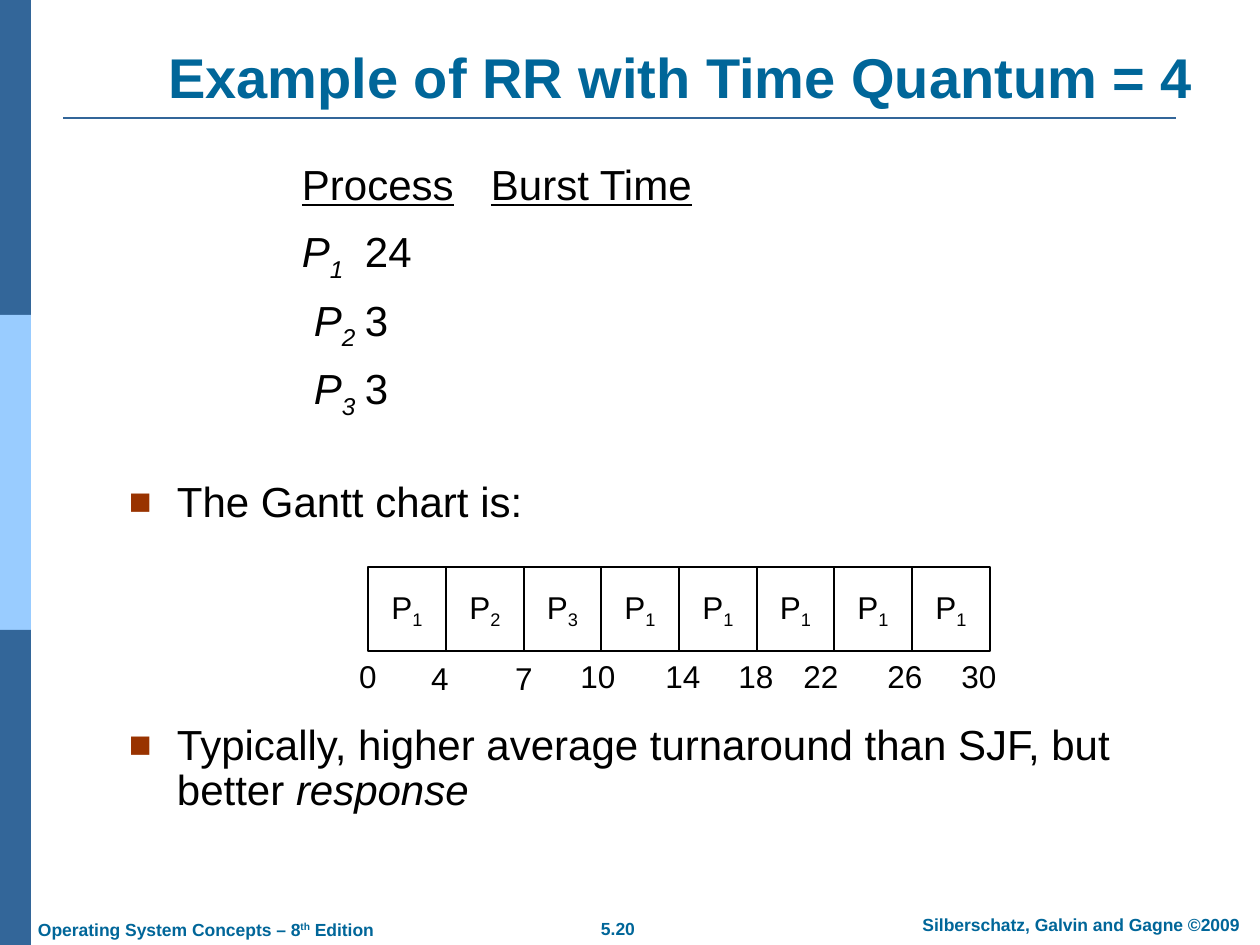
"""Build a slide showing round-robin scheduling with its Gantt chart."""
from dataclasses import dataclass

from lxml import etree
from pptx import Presentation
from pptx.dml.color import RGBColor
from pptx.enum.shapes import MSO_CONNECTOR, MSO_SHAPE
from pptx.enum.text import MSO_ANCHOR, PP_ALIGN
from pptx.oxml.ns import qn
from pptx.util import Pt

RECT = MSO_SHAPE.RECTANGLE
STRAIGHT = MSO_CONNECTOR.STRAIGHT
LEFT, CENTER = PP_ALIGN.LEFT, PP_ALIGN.CENTER
TOP, MIDDLE, BOTTOM = MSO_ANCHOR.TOP, MSO_ANCHOR.MIDDLE, MSO_ANCHOR.BOTTOM
FONT = "Arial"
COLORS = {"bar": "336699", "light": "99CCFF", "title": "006699",
          "bullet": "993300", "text": "000000", "white": "FFFFFF"}


@dataclass(frozen=True)
class Box:
    x: int
    y: int
    w: int
    h: int


@dataclass(frozen=True)
class Run:
    text: str
    italic: bool = False
    underline: bool = False
    base: int = 0


@dataclass(frozen=True)
class Row:
    runs: tuple[Run, ...]
    tab: int
    indent: int = 0


@dataclass(frozen=True)
class Footer:
    box: Box
    runs: tuple[Run, ...]
    align: PP_ALIGN = CENTER


@dataclass(frozen=True)
class Tick:
    label: str
    x: int
    y: int = 651


def px(n: int) -> int:
    return round(n * 914400 / 126)


def rgb(name: str) -> RGBColor:
    return RGBColor.from_string(COLORS[name])


def place(sp, box: Box) -> None:
    sp.left, sp.top, sp.width, sp.height = map(px, (box.x, box.y, box.w, box.h))


def set_frame(tf, anchor: MSO_ANCHOR) -> None:
    tf.word_wrap = True
    tf.vertical_anchor = anchor
    tf.margin_left = tf.margin_right = tf.margin_top = tf.margin_bottom = 0


def add_text(p, runs, *, size=24, color="text", bold=False, align=LEFT,
             spacing=None, before=0) -> None:
    p.alignment = align
    p.line_spacing = spacing
    p.space_before = Pt(before)
    for run in runs:
        r = p.add_run()
        r.text = run.text
        r.font.name, r.font.size = FONT, Pt(size)
        r.font.bold, r.font.italic = bold, run.italic
        r.font.underline = run.underline
        r.font.color.rgb = rgb(color)
        if run.base:
            r._r.get_or_add_rPr().set("baseline", str(run.base * 1000))


def add_box(shapes, box: Box, anchor=TOP):
    sp = shapes.add_textbox(0, 0, 0, 0)
    place(sp, box)
    set_frame(sp.text_frame, anchor)
    return sp.text_frame


def add_rect(shapes, box: Box, fill: str, line: str | None = None):
    sp = shapes.add_shape(RECT, 0, 0, 0, 0)
    place(sp, box)
    sp.shadow.inherit = False
    sp.fill.solid()
    sp.fill.fore_color.rgb = rgb(fill)
    if line:
        sp.line.color.rgb = rgb(line)
        sp.line.width = Pt(0.75)
    else:
        sp.line.fill.background()
    return sp


def add_rule(shapes, x1: int, x2: int, y: int) -> None:
    cxn = shapes.add_connector(STRAIGHT, px(x1), px(y), px(x2), px(y))
    cxn.line.color.rgb = rgb("bar")
    cxn.line.width = Pt(1.5)
    etree.SubElement(cxn._element.spPr, qn("a:effectLst"))


def set_tab(p, indent: int, tab: int) -> None:
    pPr = p._p.get_or_add_pPr()
    pPr.set("marL", "0")
    pPr.set("indent", str(px(indent)))
    tabs = etree.SubElement(pPr, qn("a:tabLst"))
    etree.SubElement(tabs, qn("a:tab"), pos=str(px(tab)), algn="l")


def set_bullet(p) -> None:
    pPr = p._p.get_or_add_pPr()
    pPr.set("marL", str(px(48)))
    pPr.set("indent", str(-px(48)))
    clr = etree.SubElement(pPr, qn("a:buClr"))
    etree.SubElement(clr, qn("a:srgbClr"), val=COLORS["bullet"])
    etree.SubElement(pPr, qn("a:buSzPct"), val="90000")
    etree.SubElement(pPr, qn("a:buFont"), typeface=FONT)
    etree.SubElement(pPr, qn("a:buChar"), char="■")


def process(n: int, italic=False) -> tuple[Run, ...]:
    return Run("P", italic), Run(str(n), italic, base=-25)


def burst(n: int, time: int, tab=126, indent=0) -> Row:
    return Row((*process(n, True), Run(f"\t{time}")), tab, indent)


def paragraph(tf, i: int):
    return tf.add_paragraph() if i else tf.paragraphs[0]


ROWS = [Row((Run("Process", underline=True), Run("\t"),
             Run("Burst Time", underline=True)), 252),
        burst(1, 24), burst(2, 3, 139, 12), burst(3, 3, 126, 12)]
BULLETS = [(Run("The Gantt chart is:"),),
           (Run("Typically, higher average turnaround than SJF, but better "),
            Run("response", italic=True))]
FOOTERS = [Footer(Box(587, 911, 62, 34), (Run("5.20"),)),
           Footer(Box(902, 907, 358, 34), (Run("Silberschatz, Galvin and Gagne ©2009"),)),
           Footer(Box(38, 912, 363, 34), (Run("Operating System Concepts – 8"),
                                          Run("th", base=30), Run(" Edition")), LEFT)]
SCHEDULE = [1, 2, 3, 1, 1, 1, 1, 1]
TICKS = [Tick("0", 368), Tick("4", 440, 653), Tick("7", 524, 653),
         Tick("10", 598), Tick("14", 683), Tick("18", 756),
         Tick("22", 821), Tick("26", 905), Tick("30", 979)]
GANTT = Box(368, 567, 622, 84)


def add_gantt(shapes) -> None:
    n = len(SCHEDULE)
    for i, number in enumerate(SCHEDULE):
        x, end = (GANTT.x + round(GANTT.w * k / n) for k in (i, i + 1))
        sp = add_rect(shapes, Box(x, GANTT.y, end - x, GANTT.h), "white", "text")
        set_frame(sp.text_frame, MIDDLE)
        add_text(sp.text_frame.paragraphs[0], process(number), size=18, align=CENTER)
    for tick in TICKS:
        tf = add_box(shapes, Box(tick.x - 30, tick.y, 60, 50), MIDDLE)
        add_text(tf.paragraphs[0], [Run(tick.label)], size=18, align=CENTER)


def main() -> None:
    prs = Presentation()
    prs.slide_width, prs.slide_height = px(1260), px(945)
    slide = prs.slides.add_slide(prs.slide_layouts[5])
    shapes = slide.shapes
    for i, color in enumerate(("bar", "light", "bar")):
        add_rect(shapes, Box(0, 315 * i, 31, 315), color)
    add_rule(shapes, 63, 1176, 118)
    for footer in FOOTERS:
        tf = add_box(shapes, footer.box, MIDDLE)
        add_text(tf.paragraphs[0], footer.runs, size=10, color="title",
                 bold=True, align=footer.align)
    place(shapes.title, Box(126, 0, 1110, 110))
    set_frame(shapes.title.text_frame, BOTTOM)
    add_text(shapes.title.text_frame.paragraphs[0],
             [Run("Example of RR with Time Quantum = 4")],
             size=32, color="title", bold=True, align=CENTER)
    tf = add_box(shapes, Box(302, 164, 885, 260))
    for i, row in enumerate(ROWS):
        p = paragraph(tf, i)
        set_tab(p, row.indent, row.tab)
        add_text(p, row.runs, spacing=0.9, before=9.7 if i else 0)
    tf = add_box(shapes, Box(129, 481, 1058, 340))
    for i, runs in enumerate(BULLETS):
        p = paragraph(tf, i)
        set_bullet(p)
        add_text(p, runs, spacing=0.9, before=113 if i else 0)
    add_gantt(shapes.add_group_shape().shapes)
    prs.save("out.pptx")


if __name__ == "__main__":
    main()
